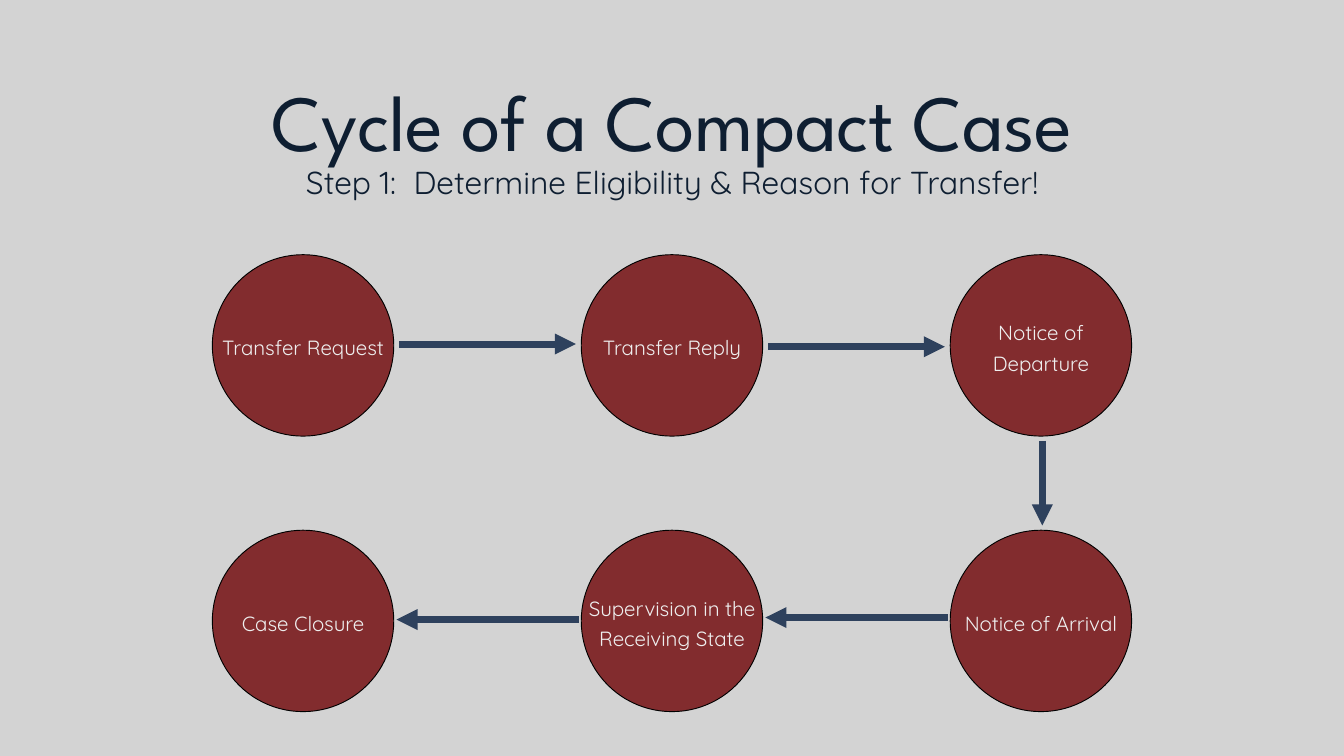
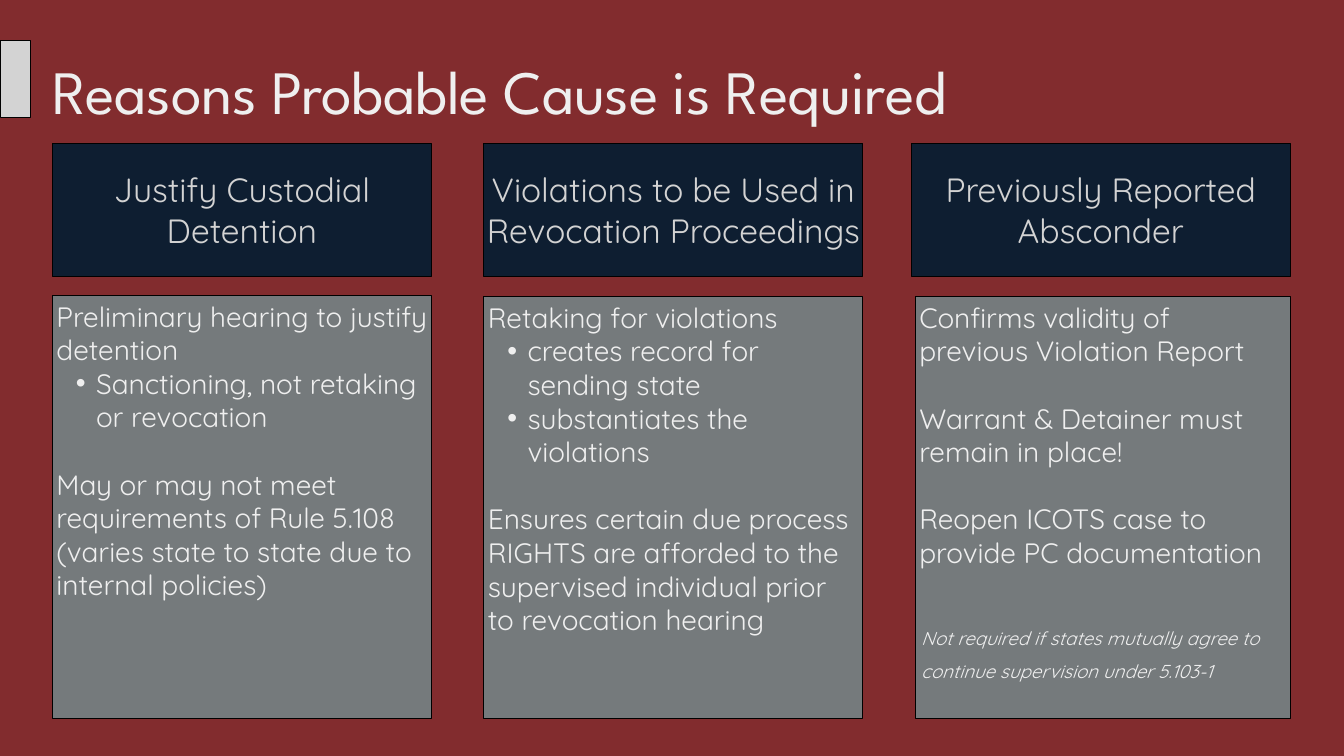
from dataclasses import dataclass

from lxml import etree
from pptx import Presentation
from pptx import util as u
from pptx.dml.color import RGBColor
from pptx.enum import shapes, text
from pptx.oxml import ns

NAVY, SLATE, MAROON = "0E1E31", "2E415D", "822C2E"
SILVER, GREY, WHITE, BLACK = "D3D3D3", "757A7C", "EFEFEF", "000000"
HEADING_FONT, BODY_FONT = "League Spartan", "Quicksand"
LEFT, CENTER = text.PP_ALIGN.LEFT, text.PP_ALIGN.CENTER
TOP, MIDDLE = text.MSO_ANCHOR.TOP, text.MSO_ANCHOR.MIDDLE


@dataclass(frozen=True)
class Style:
    size: float
    leading: float
    color: str
    align: text.PP_ALIGN = LEFT
    font: str = BODY_FONT
    italic: bool = False
    tracking: int = 0


@dataclass(frozen=True)
class Box:
    left: float
    top: float
    width: float
    height: float

    def lengths(self) -> list:
        return [u.Inches(v) for v in (self.left, self.top, self.width, self.height)]


@dataclass(frozen=True)
class Line:
    words: str
    bullet: bool = False
    gap: float = 0


@dataclass(frozen=True)
class Stage:
    column: int
    row: int
    lines: tuple
    rows_of_text: int = 1


@dataclass(frozen=True)
class Arrow:
    start: tuple
    end: tuple


@dataclass(frozen=True)
class Reason:
    heading: str
    heading_left: float
    details_box: Box
    details: tuple


CYCLE_TITLE = Style(85, 102, NAVY, CENTER, HEADING_FONT, tracking=-50)
CYCLE_STEP = Style(34, 30.6, NAVY, CENTER)
STAGE_LABEL = Style(22, 33, WHITE, CENTER)
REASONS_TITLE = Style(66, 71.3, WHITE, LEFT, HEADING_FONT, tracking=-40)
REASON_HEADING = Style(36, 43.2, SILVER, CENTER)
REASON_DETAIL = Style(30, 36, WHITE)
FOOTNOTE = Style(20, 36, WHITE, italic=True)

CIRCLE = 2.7
STAGE_LEFT, STAGE_STEP = 3.16, 5.49
STAGE_TOP, ROW_STEP = 3.79, 4.1
LABEL_WIDTH = 2.92

STAGES = (
    Stage(0, 0, (Line("Transfer Request"),)),
    Stage(1, 0, (Line("Transfer Reply"),)),
    Stage(2, 0, (Line("Notice of"), Line("Departure")), 2),
    Stage(2, 1, (Line("Notice of Arrival"),)),
    Stage(1, 1, (Line("Supervision in the Receiving State"),), 2),
    Stage(0, 1, (Line("Case Closure"),)),
)

ARROWS = (
    Arrow((5.94, 5.12), (8.57, 5.12)),
    Arrow((11.43, 5.16), (14.06, 5.16)),
    Arrow((15.51, 6.56), (15.51, 7.82)),
    Arrow((14.1, 9.19), (11.39, 9.19)),
    Arrow((8.61, 9.22), (5.9, 9.22)),
)

REASONS = (
    Reason("Justify Custodial Detention", 0.78, Box(0.78, 4.39, 5.64, 6.3), (
        Line("Preliminary hearing to justify detention"),
        Line("Sanctioning, not retaking or revocation", bullet=True),
        Line("May or may not meet requirements of Rule 5.108 "
             "(varies state to state due to internal policies)", gap=36),
    )),
    Reason("Violations to be Used in Revocation Proceedings", 7.2, Box(7.2, 4.41, 5.64, 6.28), (
        Line("Retaking for violations"),
        Line("creates record for sending state", bullet=True),
        Line("substantiates the violations", bullet=True),
        Line("Ensures certain due process RIGHTS are afforded to the "
             "supervised individual prior to revocation hearing", gap=36),
    )),
    Reason("Previously Reported Absconder", 13.56, Box(13.62, 4.41, 5.58, 6.28), (
        Line("Confirms validity of previous Violation Report"),
        Line("Warrant & Detainer must remain in place!", gap=36),
        Line("Reopen ICOTS case to provide PC documentation", gap=36),
    )),
)


def rgb(color: str) -> RGBColor:
    return RGBColor.from_string(color)


def new_slide(deck, layout: int, background: str):
    slide = deck.slides.add_slide(deck.slide_layouts[layout])
    slide.background.fill.solid()
    slide.background.fill.fore_color.rgb = rgb(background)
    return slide


def paint(shape, color: str) -> None:
    shape.fill.solid()
    shape.fill.fore_color.rgb = rgb(color)
    shape.line.color.rgb = rgb(BLACK)
    shape.line.width = u.Pt(1)


def set_bullet(paragraph, bullet: bool) -> None:
    props = paragraph._p.get_or_add_pPr()
    props.set("marL", str(u.Inches(0.59 if bullet else 0)))
    props.set("indent", str(u.Inches(-0.3 if bullet else 0)))
    mark = etree.SubElement(props, ns.qn("a:buChar" if bullet else "a:buNone"))
    if bullet:
        mark.set("char", "•")


def write(shape, lines: tuple, style: Style, anchor=TOP, margins: tuple = (0, 0)) -> None:
    frame = shape.text_frame
    frame.word_wrap = True
    frame.auto_size = text.MSO_AUTO_SIZE.NONE
    frame.vertical_anchor = anchor
    frame.margin_left = frame.margin_right = u.Inches(margins[0])
    frame.margin_top = frame.margin_bottom = u.Inches(margins[1])
    for index, line in enumerate(lines):
        paragraph = frame.add_paragraph() if index else frame.paragraphs[0]
        paragraph.level = int(line.bullet)
        set_bullet(paragraph, line.bullet)
        paragraph.alignment = style.align
        paragraph.line_spacing = u.Pt(style.leading)
        paragraph.space_before = u.Pt(line.gap)
        paragraph.space_after = u.Pt(0)
        run = paragraph.add_run()
        run.text = line.words
        run.font.name = style.font
        run.font.size = u.Pt(style.size)
        run.font.bold = False
        run.font.italic = style.italic
        run.font.color.rgb = rgb(style.color)
        if style.tracking:
            run._r.get_or_add_rPr().set("spc", str(style.tracking))


def place(placeholder, box: Box) -> None:
    placeholder.left, placeholder.top, placeholder.width, placeholder.height = box.lengths()


def add_panel(slide, kind, box: Box, color: str):
    panel = slide.shapes.add_shape(kind, *box.lengths())
    panel.shadow.inherit = False
    paint(panel, color)
    return panel


def add_stage(slide, stage: Stage) -> None:
    left = STAGE_LEFT + stage.column * STAGE_STEP
    top = STAGE_TOP + stage.row * ROW_STEP
    add_panel(slide, shapes.MSO_SHAPE.OVAL, Box(left, top, CIRCLE, CIRCLE), MAROON)
    height = 0.45 * stage.rows_of_text
    label_box = Box(left + (CIRCLE - LABEL_WIDTH) / 2, top + 1.33 - height / 2, LABEL_WIDTH, height)
    label = slide.shapes.add_textbox(*label_box.lengths())
    write(label, stage.lines, STAGE_LABEL)


def add_arrow(slide, arrow: Arrow) -> None:
    ends = [u.Inches(v) for v in arrow.start + arrow.end]
    connector = slide.shapes.add_connector(shapes.MSO_CONNECTOR.STRAIGHT, *ends)
    connector.line.color.rgb = rgb(SLATE)
    connector.line.width = u.Pt(7.5)
    etree.SubElement(connector.line._get_or_add_ln(), ns.qn("a:tailEnd")).set("type", "triangle")
    etree.SubElement(connector._element.spPr, ns.qn("a:effectLst"))


def build_cycle(deck) -> None:
    slide = new_slide(deck, 0, SILVER)
    title, step = slide.placeholders
    place(title, Box(1.97, 1.07, 16.07, 1.41))
    write(title, (Line("Cycle of a Compact Case"),), CYCLE_TITLE)
    place(step, Box(1.97, 2.57, 16.07, 0.48))
    write(step, (Line("Step 1:  Determine Eligibility & Reason for Transfer!"),), CYCLE_STEP)
    for stage in STAGES:
        add_stage(slide, stage)
    for arrow in ARROWS:
        add_arrow(slide, arrow)


def build_reasons(deck) -> None:
    slide = new_slide(deck, 4, MAROON)
    title, *bodies = slide.placeholders
    place(title, Box(0.78, 0.65, 18.47, 1.48))
    write(title, (Line("Reasons Probable Cause is Required"),), REASONS_TITLE, MIDDLE)
    add_panel(slide, shapes.MSO_SHAPE.RECTANGLE, Box(0, 0.6, 0.45, 1.15), SILVER)
    for reason, details in zip(REASONS, bodies):
        place(details, reason.details_box)
        paint(details, GREY)
        write(details, reason.details, REASON_DETAIL, margins=(0.06, 0.06))
        heading_box = Box(reason.heading_left, 2.13, 5.64, 1.98)
        heading = add_panel(slide, shapes.MSO_SHAPE.RECTANGLE, heading_box, NAVY)
        write(heading, (Line(reason.heading),), REASON_HEADING, MIDDLE)
    for spare in bodies[len(REASONS):]:
        spare._element.getparent().remove(spare._element)
    footnote = slide.shapes.add_textbox(*Box(13.61, 9.11, 5.58, 1.05).lengths())
    exception = "Not required if states mutually agree to continue supervision under 5.103-1"
    write(footnote, (Line(exception),), FOOTNOTE, margins=(0.1, 0.05))


def main() -> None:
    deck = Presentation()
    deck.slide_width, deck.slide_height = u.Inches(20), u.Inches(11.25)
    build_cycle(deck)
    build_reasons(deck)
    deck.save("out.pptx")


if __name__ == "__main__":
    main()
